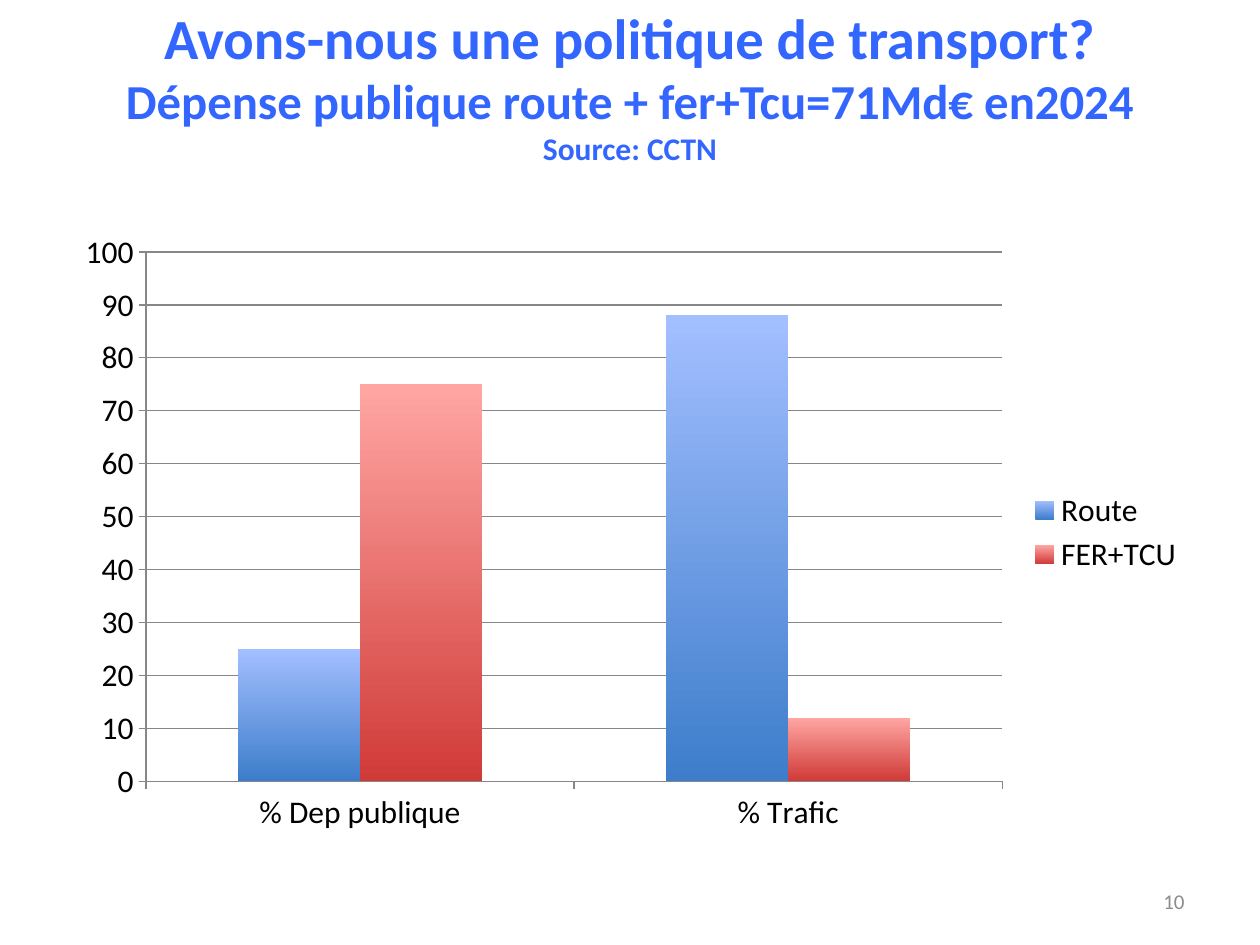
from pptx import Presentation
from pptx.chart.data import CategoryChartData as Data
from pptx.dml.color import RGBColor as Rgb
from pptx.enum.chart import XL_CHART_TYPE as Kind, XL_LEGEND_POSITION as Side, XL_TICK_MARK as Tick
from pptx.enum.text import MSO_ANCHOR as Anchor, PP_ALIGN as Align
from pptx.util import Inches, Pt

FONT = "Calibri"
WIDE, HIGH = Inches(10), Inches(7.5)
COLS, ROWS = 20, 30
HUES = {"title": "3366FF", "text": "000000", "page": "8C8C8C", "line": "878787"}
FILLS = {"Route": ("3D7DCB", "A3BFFF"), "FER+TCU": ("D03B38", "FFA6A3")}
CATS = ["% Dep publique", "% Trafic"]
VALS = {"Route": [25, 88], "FER+TCU": [75, 12]}


def hue(key):
    return Rgb.from_string(HUES[key])


def area(col, row, cols, rows):
    return [round(n) for n in (col * WIDE / COLS, row * HIGH / ROWS,
                               cols * WIDE / COLS, rows * HIGH / ROWS)]


def write(slide, box, lines, color="text", bold=False, align=Align.CENTER, foot=0.05):
    frame = slide.shapes.add_textbox(*box).text_frame
    frame.word_wrap = True
    frame.vertical_anchor = Anchor.MIDDLE
    frame.margin_bottom = Inches(foot)
    para = frame.paragraphs[0]
    para.alignment = align
    for i, (text, size) in enumerate(lines):
        if i:
            para.add_line_break()
        run = para.add_run()
        run.text = text
        font = run.font
        font.name, font.size, font.bold = FONT, Pt(size), bold
        font.color.rgb = hue(color)


def head(slide, box):
    write(slide, box, [
        ("Avons-nous une politique de transport?", 32.4),
        ("Dépense publique route + fer+Tcu=71Md€ en2024", 27.9),
        ("Source: CCTN", 18),
    ], color="title", bold=True, foot=0.51)


def trace(line):
    line.color.rgb = hue("line")
    line.width = Pt(0.75)


def shade(fill, hues):
    fill.gradient()
    fill.gradient_angle = 90
    for i, (stop, tone) in enumerate(zip(fill.gradient_stops, hues)):
        stop.color.rgb = Rgb.from_string(tone)
        stop.position = i


def bars(slide, box):
    data = Data()
    data.categories = CATS
    for name, vals in VALS.items():
        data.add_series(name, vals)
    chart = slide.shapes.add_chart(Kind.COLUMN_CLUSTERED, *box, data).chart
    chart.has_title = False
    chart.font.name, chart.font.size = FONT, Pt(18)
    chart.font.color.rgb = hue("text")
    chart.has_legend = True
    chart.legend.position = Side.RIGHT
    chart.legend.include_in_layout = False
    plot = chart.plots[0]
    plot.gap_width, plot.overlap = 150, 0
    plot.vary_by_categories = False
    for part in plot.series:
        part.invert_if_negative = False
        shade(part.format.fill, FILLS[part.name])
    for axis in (chart.category_axis, chart.value_axis):
        axis.major_tick_mark = Tick.OUTSIDE
        axis.minor_tick_mark = Tick.NONE
        trace(axis.format.line)
    axis = chart.value_axis
    axis.minimum_scale, axis.maximum_scale, axis.major_unit = 0, 100, 10
    axis.has_major_gridlines = True
    trace(axis.major_gridlines.format.line)


def page(slide, box):
    write(slide, box, [("10", 12)], color="page", align=Align.RIGHT)


def main():
    deck = Presentation()
    deck.slide_width, deck.slide_height = WIDE, HIGH
    slide = deck.slides.add_slide(deck.slide_layouts[6])
    head(slide, area(1, 1.04, 18, 5.16))
    bars(slide, area(1, 7, 18, 19.8))
    page(slide, area(14.34, 27.8, 4.66, 1.6))
    deck.save("out.pptx")


if __name__ == "__main__":
    main()
